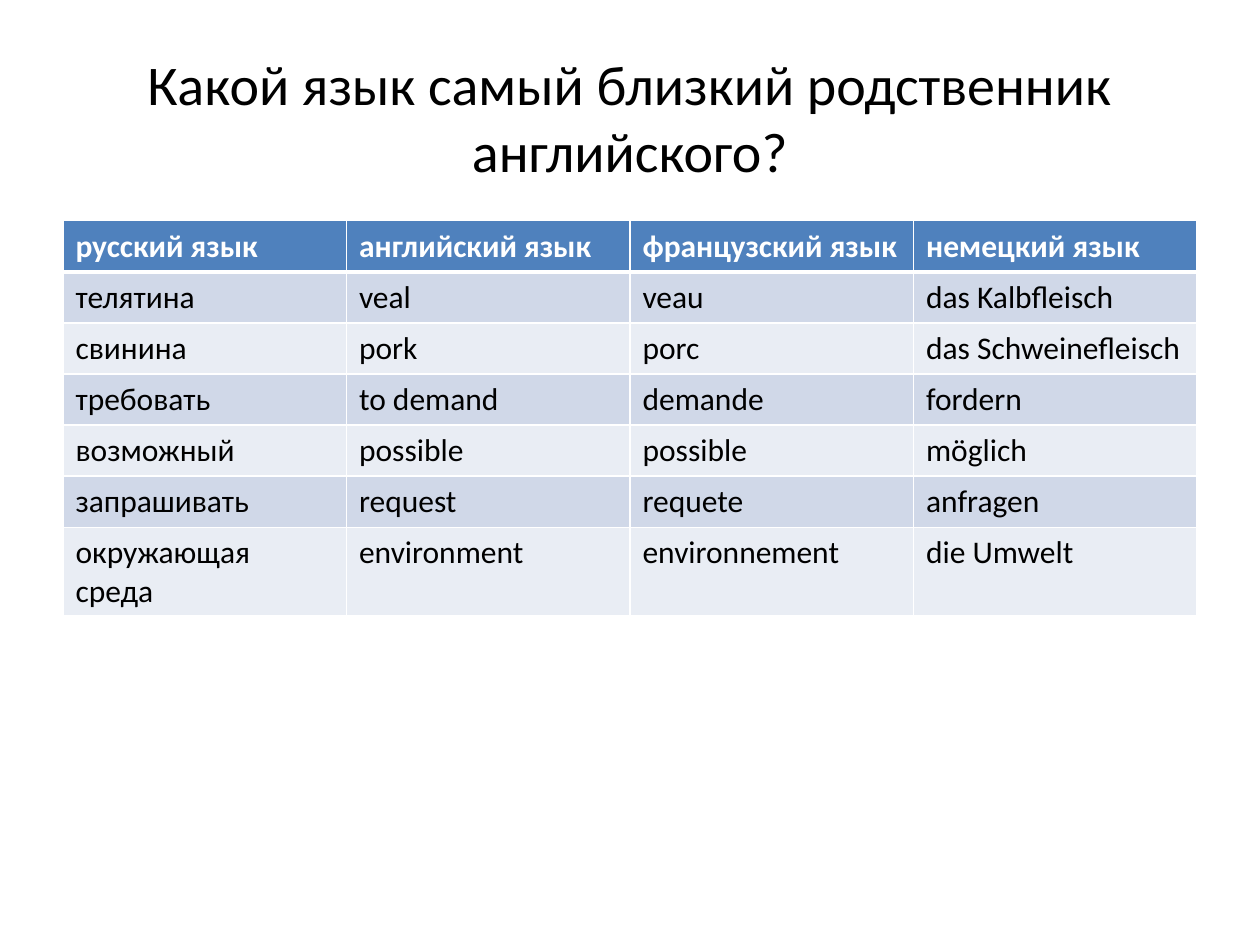
from dataclasses import dataclass

from lxml.etree import SubElement
from pptx import Presentation
from pptx.dml.color import RGBColor
from pptx.enum.text import MSO_ANCHOR, PP_ALIGN
from pptx.oxml.ns import qn
from pptx.util import Cm, Pt

WHITE = RGBColor(0xFF, 0xFF, 0xFF)
BLACK = RGBColor(0x00, 0x00, 0x00)
BLUE = RGBColor(0x4F, 0x81, 0xBD)
BAND_DARK = RGBColor(0xD0, 0xD8, 0xE8)
BAND_LIGHT = RGBColor(0xE9, 0xED, 0xF4)

FONT = "Calibri"
LEFT, WIDTH = Cm(1.27), Cm(22.86)
ROW_HEIGHT = Cm(1.03)
THIN, THICK = Pt(1), Pt(3)

WORDS = [
    ("русский язык", "английский язык", "французский язык", "немецкий язык"),
    ("телятина", "veal", "veau", "das Kalbfleisch"),
    ("свинина", "pork", "porc", "das Schweinefleisch"),
    ("требовать", "to demand", "demande", "fordern"),
    ("возможный", "possible", "possible", "möglich"),
    ("запрашивать", "request", "requete", "anfragen"),
    ("окружающая среда", "environment", "environnement", "die Umwelt"),
]


@dataclass(frozen=True)
class RowStyle:
    fill: RGBColor
    color: RGBColor = BLACK
    bold: bool = False
    top: int = THIN
    bottom: int = THIN


def row_style(row: int) -> RowStyle:
    if row == 0:
        return RowStyle(BLUE, WHITE, bold=True, bottom=THICK)
    fill = BAND_DARK if row % 2 else BAND_LIGHT
    return RowStyle(fill, top=THICK if row == 1 else THIN)


def format_run(r, size: int, color: RGBColor, bold: bool = False) -> None:
    r.font.name = FONT
    r.font.size = Pt(size)
    r.font.color.rgb = color
    r.font.bold = bold


def set_borders(cell, style: RowStyle) -> None:
    tcPr = cell._tc.get_or_add_tcPr()
    widths = {"L": THIN, "R": THIN, "T": style.top, "B": style.bottom}
    for side, width in widths.items():
        ln = SubElement(tcPr, qn(f"a:ln{side}"), w=str(int(width)))
        fill = SubElement(ln, qn("a:solidFill"))
        SubElement(fill, qn("a:srgbClr"), val=str(WHITE))


def draw_cell(cell, text: str, style: RowStyle) -> None:
    # Borders must precede the fill in the cell properties
    set_borders(cell, style)
    cell.fill.solid()
    cell.fill.fore_color.rgb = style.fill
    cell.text_frame.text = text
    format_run(cell.text_frame.paragraphs[0].runs[0], 18, style.color, style.bold)


def draw_title(s, text: str) -> None:
    tf = s.shapes.add_textbox(LEFT, Cm(0.76), WIDTH, Cm(3.18)).text_frame
    tf.word_wrap = True
    tf.vertical_anchor = MSO_ANCHOR.MIDDLE
    tf.text = text
    p = tf.paragraphs[0]
    p.alignment = PP_ALIGN.CENTER
    format_run(p.runs[0], 32, BLACK)


def draw_table(s, words: list[tuple[str, ...]]) -> None:
    rows, cols = len(words), len(words[0])
    frame = s.shapes.add_table(rows, cols, LEFT, Cm(4.45), WIDTH, ROW_HEIGHT * rows)
    for i, row in enumerate(words):
        for j, word in enumerate(row):
            draw_cell(frame.table.cell(i, j), word, row_style(i))


def main() -> None:
    prs = Presentation()
    prs.slide_width, prs.slide_height = Cm(25.4), Cm(19.05)
    s = prs.slides.add_slide(prs.slide_layouts[6])
    draw_title(s, "Какой язык самый близкий родственник английского?")
    draw_table(s, WORDS)
    prs.save("out.pptx")


if __name__ == "__main__":
    main()
